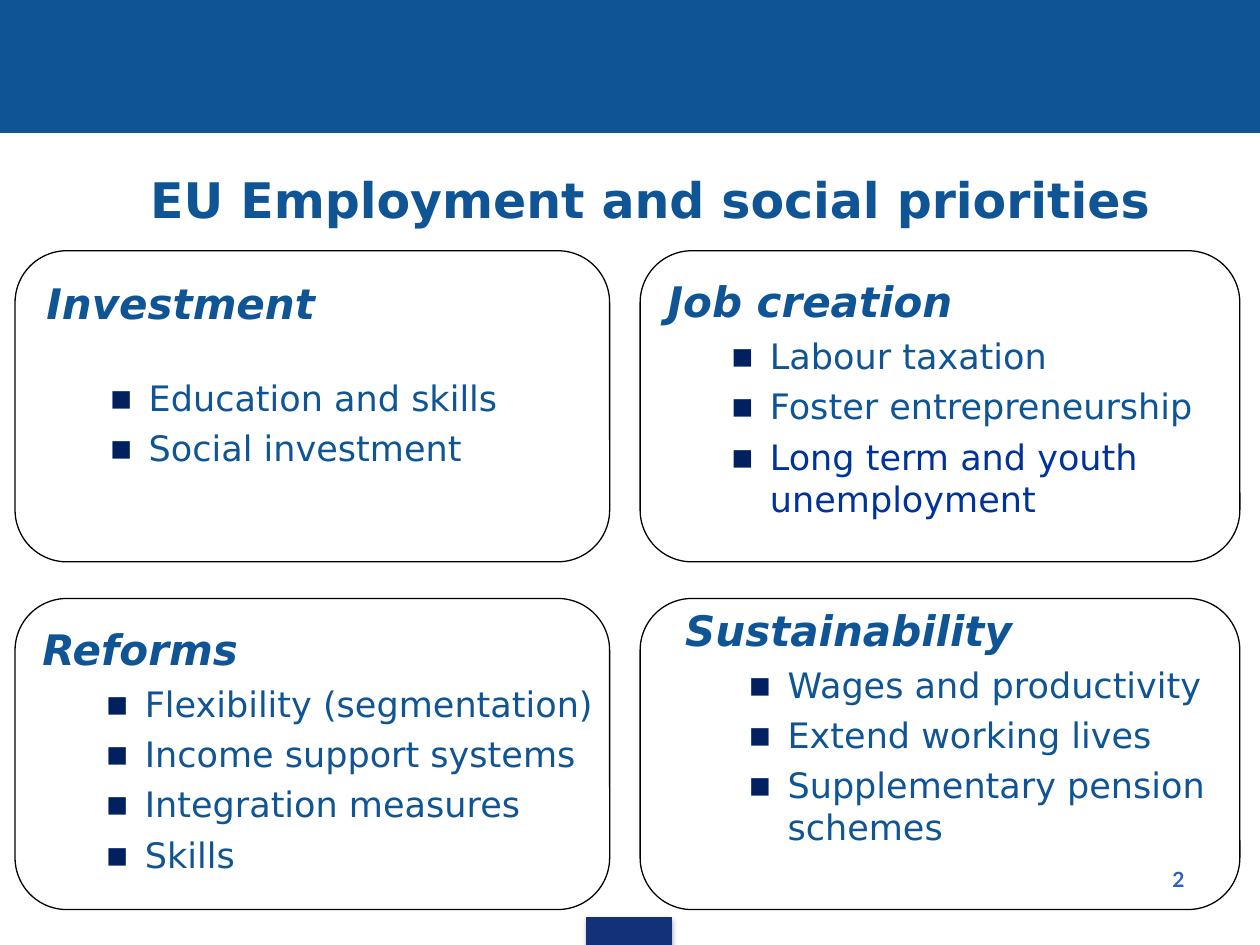
from lxml import etree
from pptx import Presentation
from pptx.dml.color import RGBColor
from pptx.enum import shapes, text
from pptx.oxml import parse_xml
from pptx.oxml.ns import nsdecls, qn
from pptx.util import Pt

HUES = {"blue": "0F5494", "navy": "133176", "mark": "002060",
        "royal": "003399", "page": "2D5EC1", "black": "000000"}
FONT = "DejaVu Sans"
COLS = ((8.6, 339.8), (365.8, 342.7))
ROWS = (143.3, 342)
HIGH = 177.8
GAP = 4.7

PANELS = (
    (0, 0, (10.8, 11.5, 326, 118), "Investment", 28,
     (("Education and skills", "blue"), ("Social investment", "blue"))),
    (1, 0, (8.6, 10.8, 314.6, 147.6), "Job creation", GAP,
     (("Labour taxation", "blue"), ("Foster entrepreneurship", "blue"),
      ("Long term and youth unemployment", "royal"))),
    (0, 1, (8.6, 10.8, 360, 152.6), "Reforms", GAP,
     (("Flexibility (segmentation)", "blue"),
      ("Income support systems", "blue"),
      ("Integration measures", "blue"), ("Skills", "blue"))),
    (1, 1, (18.7, 0, 316, 147.6), "Sustainability", GAP,
     (("Wages and productivity", "blue"), ("Extend working lives", "blue"),
      ("Supplementary pension schemes", "blue"))),
)


def tint(name):
    """Return the named colour."""
    return RGBColor.from_string(HUES[name])


def write(para, words, size, hue, font=FONT, bold=False, slant=False):
    """Add one formatted run to a paragraph."""
    run = para.add_run()
    run.text = words
    face = run.font
    face.name, face.size = font, Pt(size)
    face.bold, face.italic = bold, slant
    face.color.rgb = tint(hue)


def add_box(slide, box):
    """Add a wrapping text box and return its frame."""
    frame = slide.shapes.add_textbox(*map(Pt, box)).text_frame
    frame.word_wrap = True
    return frame


def add_form(slide, kind, box, line, fill=None):
    """Add an outlined preset shape, filled if a colour is named."""
    form = slide.shapes.add_shape(kind, *map(Pt, box))
    form.shadow.inherit = False
    form.line.color.rgb = tint(line)
    form.line.width = Pt(0.75)
    if fill:
        form.fill.solid()
        form.fill.fore_color.rgb = tint(fill)
    else:
        form.fill.background()
    return form


def add_bullet(para):
    """Give a paragraph a hanging square bullet."""
    para.level = 1
    props = para._p.get_or_add_pPr()
    props.set("marL", str(Pt(58.5)))
    props.set("indent", str(Pt(-22.5)))
    hue = etree.SubElement(props, qn("a:buClr"))
    etree.SubElement(hue, qn("a:srgbClr")).set("val", HUES["mark"])
    etree.SubElement(props, qn("a:buFont")).set("typeface", FONT)
    etree.SubElement(props, qn("a:buChar")).set("char", "▪")


def add_bands(slide):
    """Draw the top band and the small shadowed tab at the foot."""
    rect = shapes.MSO_SHAPE.RECTANGLE
    add_form(slide, rect, (0, 0, 720, 75.6), "blue", "blue")
    tab = add_form(slide, rect, (335.5, 524.2, 48.2, 15.8), "navy", "navy")
    glow = tab._element.spPr.find(qn("a:effectLst"))
    glow.append(parse_xml(
        f'<a:outerShdw {nsdecls("a")} blurRad="{Pt(3.1)}" dist="{Pt(1.8)}" '
        f'dir="5400000" rotWithShape="0"><a:srgbClr val="{HUES["black"]}">'
        '<a:alpha val="35000"/></a:srgbClr></a:outerShdw>'))


def add_title(slide, box, words):
    """Place and format the title."""
    title = slide.shapes.title
    title.left, title.top, title.width, title.height = map(Pt, box)
    frame = title.text_frame
    frame.word_wrap = True
    frame.auto_size = text.MSO_AUTO_SIZE.NONE
    frame.vertical_anchor = text.MSO_ANCHOR.MIDDLE
    para = frame.paragraphs[0]
    para.alignment = text.PP_ALIGN.CENTER
    para._p.get_or_add_pPr().set("marL", str(Pt(28)))
    write(para, words, 28, "blue", bold=True)


def add_panel(slide, box, inner, head, first, items):
    """Draw a rounded panel with a heading and bullets."""
    add_form(slide, shapes.MSO_SHAPE.ROUNDED_RECTANGLE, box, "black")
    left, top, wide, high = inner
    frame = add_box(slide, (box[0] + left, box[1] + top, wide, high))
    write(frame.paragraphs[0], head, 24, "blue", bold=True, slant=True)
    for rank, (words, hue) in enumerate(items):
        para = frame.add_paragraph()
        add_bullet(para)
        para.space_before = Pt(GAP if rank else first)
        write(para, words, 20, hue)


def add_page(slide, box, number):
    """Write the page number."""
    para = add_box(slide, box).paragraphs[0]
    para.alignment = text.PP_ALIGN.RIGHT
    write(para, number, 12, "page", font="Lato", bold=True)


def main():
    """Build and save the slide."""
    deck = Presentation()
    deck.slide_width, deck.slide_height = Pt(720), Pt(540)
    slide = deck.slides.add_slide(deck.slide_layouts[5])
    add_bands(slide)
    add_title(slide, (14.4, 77, 686, 73.4),
              "EU Employment and social priorities")
    for col, row, *parts in PANELS:
        left, wide = COLS[col]
        add_panel(slide, (left, ROWS[row], wide, HIGH), *parts)
    add_page(slide, (516.2, 491.8, 167.8, 37.4), "2")
    deck.save("out.pptx")


if __name__ == "__main__":
    main()
